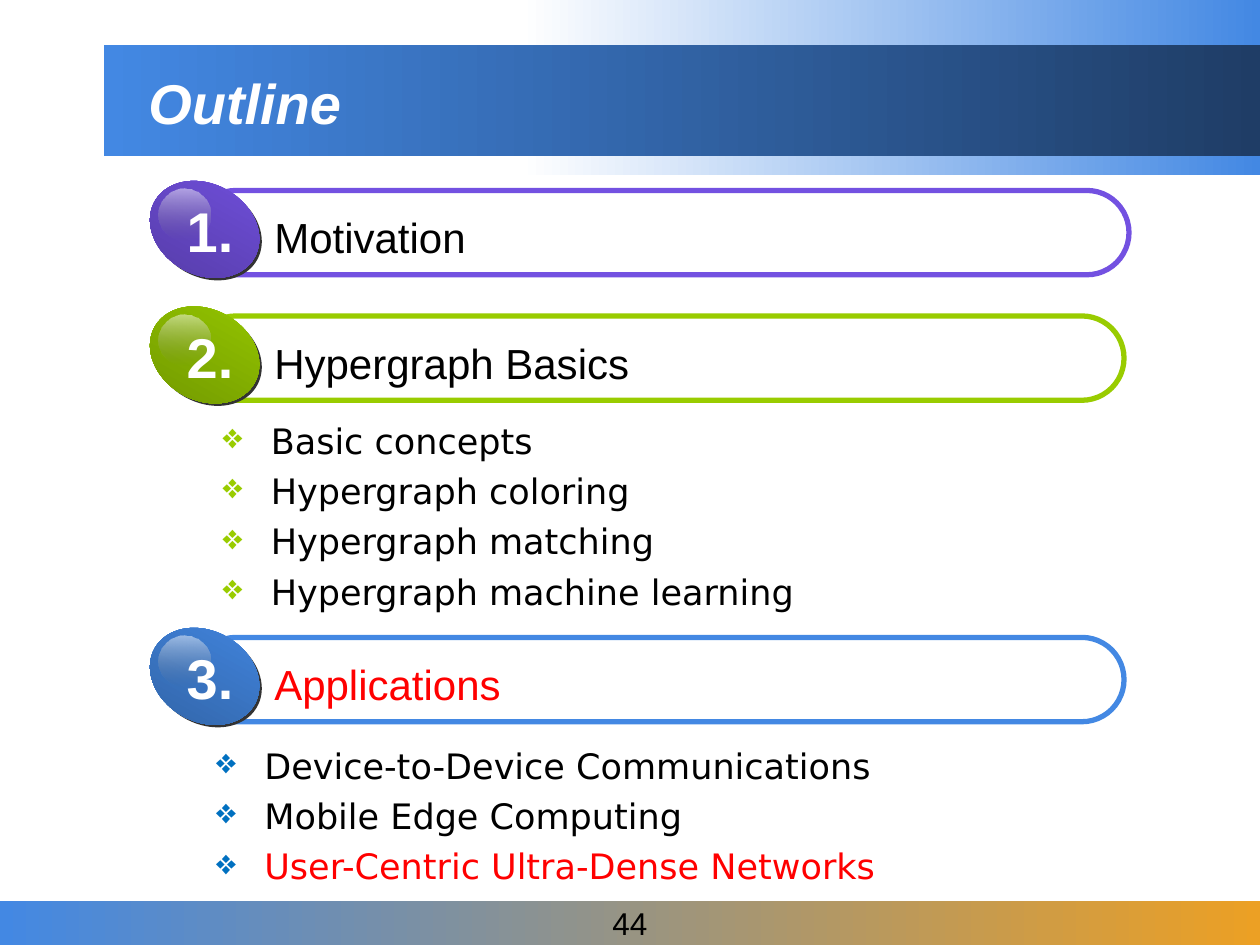
from pptx import Presentation
from pptx.dml.color import RGBColor
from pptx.enum.shapes import MSO_SHAPE as Kind
from pptx.enum.text import MSO_ANCHOR as Anchor, PP_ALIGN as Align
from pptx.oxml.ns import qn
from pptx.oxml.xmlchemy import OxmlElement as Node
from pptx.util import Cm, Pt

rgb = RGBColor.from_string


def draw(home, kind, box, tones=(), turn=0):
    """Add a shape: no tone is no fill, one is solid, two are a gradient turned clockwise."""
    shape = home.add_shape(kind, *map(Cm, box))
    shape.shadow.inherit = False
    shape.line.fill.background()
    fill = shape.fill
    if len(tones) == 2:
        fill.gradient()
        fill.gradient_angle = -turn % 360
        for stop, tone in zip(fill.gradient_stops, tones):
            stop.color.rgb = rgb(tone)
    elif tones:
        fill.solid()
        fill.fore_color.rgb = rgb(tones[0])
    else:
        fill.background()
    return shape


def write(para, text, size, tone, face="Arial", bold=False):
    run = para.add_run()
    run.text = text
    font = run.font
    font.name, font.size, font.bold = face, Pt(size), bold
    font.color.rgb = rgb(tone)
    return run


deck = Presentation()
deck.slide_width, deck.slide_height = Cm(25.4), Cm(19.05)
slide = deck.slides.add_slide(deck.slide_layouts[6])
shapes = slide.shapes

# Header and footer bands
draw(shapes, Kind.RECTANGLE, (10.49, 0, 14.91, 3.53), ("FFFFFF", "4388E3"))
foot = draw(shapes, Kind.RECTANGLE, (0, 18.16, 25.4, 0.89), ("4388E3", "ECA024"))
frame = foot.text_frame
frame.word_wrap = False
frame.vertical_anchor = Anchor.MIDDLE
frame.paragraphs[0].alignment = Align.CENTER
write(frame.paragraphs[0], "44", 18, "000000")
draw(shapes, Kind.RECTANGLE, (2.1, 0.91, 23.3, 2.24), ("4388E3", "1F3D66"))

title = shapes.add_textbox(Cm(2.74), Cm(1.27), Cm(22.23), Cm(1.57)).text_frame
title.word_wrap = True
title.vertical_anchor = Anchor.MIDDLE
write(title.paragraphs[0], "Outline", 32, "FFFFFF", bold=True).font.italic = True

# Numbered sections: top, bar width, label, label width, label tone, light, dark
parts = [
    (3.84, 18.85, "Motivation", 4.42, "000000", "7351E1", "523AA1"),
    (6.37, 18.75, "Hypergraph Basics", 7.75, "000000", "99CC00", "6D9200"),
    (12.85, 18.75, "Applications", 5.13, "FF0000", "4388E3", "3061A2"),
]
for num, (top, wide, label, span, tone, light, dark) in enumerate(parts, 1):
    bar = draw(shapes, Kind.ROUNDED_RECTANGLE, (3.91, top, wide, 1.7))
    bar.adjustments[0] = 0.5
    bar.line.color.rgb = rgb(light)
    bar.line.width = Pt(3)

    ball = shapes.add_group_shape().shapes
    shade = draw(ball, Kind.OVAL, (3.02, top - 0.08, 2.31, 1.83), ("333333",))
    face = draw(ball, Kind.OVAL, (2.97, top - 0.13, 2.31, 1.83), (light, dark), 90)
    shade.rotation = face.rotation = 29.3
    gloss = draw(ball, Kind.OVAL, (3.2, top - 0.03, 1.04, 1.03), ("FFFFFF", "767676"), 90)
    for clear, stop in zip(("50000", "0"), gloss._element.iter(qn("a:gs"))):
        alpha = Node("a:alpha")
        alpha.set("val", clear)
        stop[0].append(alpha)

    text = shapes.add_textbox(Cm(5.28), Cm(top + 0.3), Cm(span), Cm(1.3)).text_frame
    text.word_wrap = False
    write(text.paragraphs[0], label, 24, tone)
    count = shapes.add_textbox(Cm(3.51), Cm(top), Cm(1.45), Cm(1.6)).text_frame
    count.word_wrap = False
    count.paragraphs[0].alignment = Align.CENTER
    write(count.paragraphs[0], f"{num}.", 32, "FFFFFF", bold=True)

# Bulleted topics: left, top, height, bullet tone, items
lists = [
    (4.24, 8.33, 4.17, "99CC00", [
        ("Basic concepts", "000000"),
        ("Hypergraph coloring", "000000"),
        ("Hypergraph matching", "000000"),
        ("Hypergraph machine learning", "000000"),
    ]),
    (4.11, 14.88, 3.53, "0070C0", [
        ("Device-to-Device Communications", "000000"),
        ("Mobile Edge Computing", "000000"),
        ("User-Centric Ultra-Dense Networks", "FF0000"),
    ]),
]
for left, top, high, mark, items in lists:
    frame = shapes.add_textbox(Cm(left), Cm(top), Cm(17.37), Cm(high)).text_frame
    frame.word_wrap = True
    for row, (item, tone) in enumerate(items):
        para = frame.add_paragraph() if row else frame.paragraphs[0]
        if row:
            para.space_before = Pt(4.7)
        props = para._p.get_or_add_pPr()
        props.set("marL", str(Cm(0.97)))
        props.set("indent", str(-Cm(0.97)))
        color, tint, sign = Node("a:buClr"), Node("a:srgbClr"), Node("a:buChar")
        tint.set("val", mark)
        color.append(tint)
        sign.set("char", "❖")
        props.extend([color, sign])
        write(para, item, 20, tone, "DejaVu Sans")

deck.save("out.pptx")
